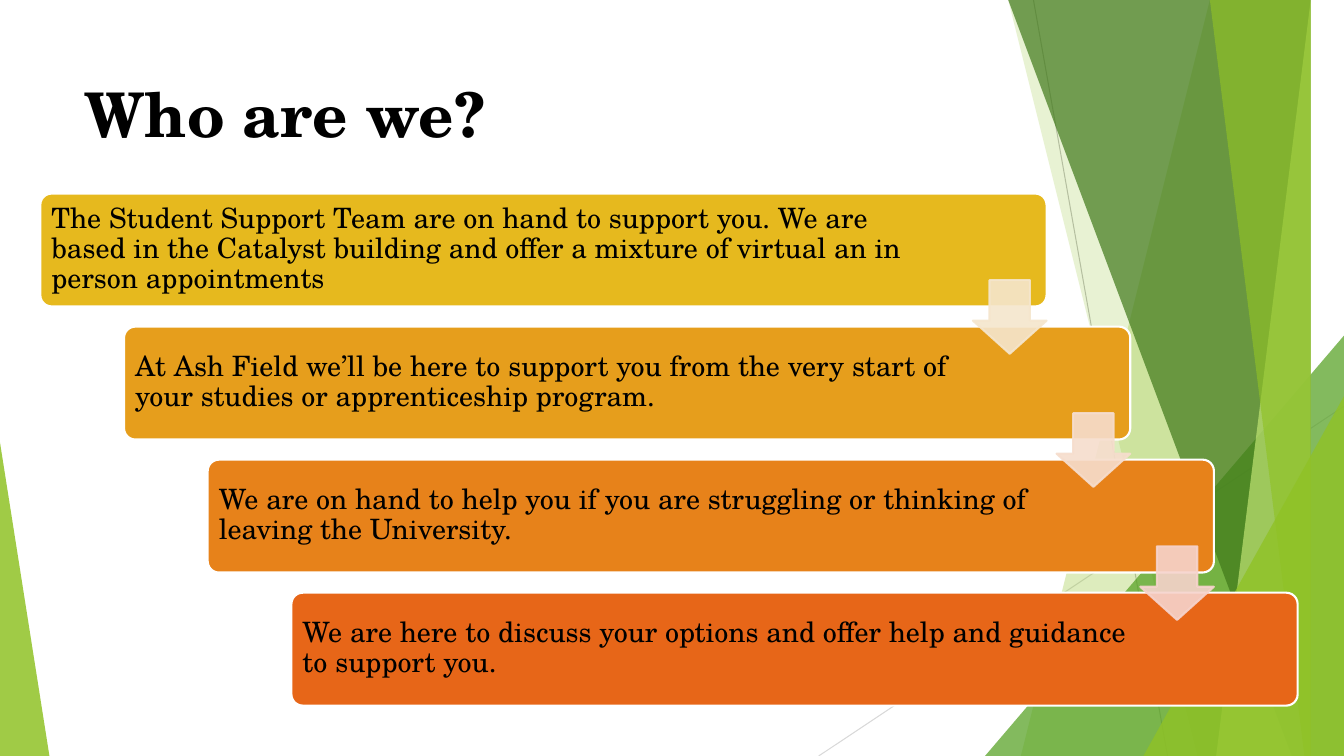
from lxml.etree import SubElement
from pptx import Presentation
from pptx.dml.color import RGBColor
from pptx.enum.shapes import MSO_CONNECTOR, MSO_SHAPE
from pptx.enum.text import MSO_ANCHOR, PP_ALIGN
from pptx.oxml.ns import qn
from pptx.util import Inches, Pt

WIDTH, HEIGHT = 13.33, 7.5
FONT = "TeX Gyre Schola"
COLORS = {
    "text": "000000", "outline": "FFFFFF",
    "line_dark": "BFBFBF", "line_light": "D9D9D9",
    "lime": "90C226", "green": "54A021", "forest": "3F7819", "pale": "C0E474",
    "card_1": "E6B91E", "card_2": "E69E1C", "card_3": "E7821A", "card_4": "E76618",
    "arrow_1": "F5E6CD", "arrow_2": "F6DDCD", "arrow_3": "F6D3CC",
}
STEPS = [
    ("The Student Support Team are on hand to support you. We are based in the "
     "Catalyst building and offer a mixture of virtual an in person appointments", 8.68),
    ("At Ash Field we’ll be here to support you from the very start of your "
     "studies or apprenticeship program.", 8.35),
    ("We are on hand to help you if you are struggling or thinking of leaving "
     "the University.", 8.37),
    ("We are here to discuss your options and offer help and guidance to "
     "support you.", 8.35),
]


def paint(fill, color, opacity=100):
    fill.solid()
    fill.fore_color.rgb = RGBColor.from_string(COLORS[color])
    if opacity < 100:
        for element in fill._xPr.iter(qn("a:srgbClr")):
            SubElement(element, qn("a:alpha"), val=str(opacity * 1000))


def style_shape(shape, color, opacity=100, outline=None):
    shape.shadow.inherit = False
    paint(shape.fill, color, opacity)
    if outline:
        shape.line.width = Pt(1.5)
        paint(shape.line.fill, outline, opacity)
    else:
        shape.line.fill.background()


def add_preset(slide, preset, box, adjustments):
    shape = slide.shapes.add_shape(preset, *(Inches(length) for length in box))
    for index, value in enumerate(adjustments):
        shape.adjustments[index] = value
    return shape


def add_text(slide, box, text, size, inset, anchor, bold=False, spacing=None):
    text_box = slide.shapes.add_textbox(*(Inches(length) for length in box))
    frame = text_box.text_frame
    frame.word_wrap = True
    frame.vertical_anchor = anchor
    frame.margin_left = frame.margin_right = Inches(inset)
    frame.margin_top = frame.margin_bottom = Inches(min(inset, 0.08))
    paragraph = frame.paragraphs[0]
    paragraph.alignment = PP_ALIGN.LEFT
    paragraph.line_spacing = spacing
    run = paragraph.add_run()
    run.text = text
    run.font.name = FONT
    run.font.size = Pt(size)
    run.font.bold = bold
    run.font.color.rgb = RGBColor.from_string(COLORS["text"])


def add_backdrop(slide, width, height):
    # Thin lines
    for start_x, start_y, end_x, color in [(10.25, 0, 11.58, "line_dark"),
                                           (width, 4.03, 8.12, "line_light")]:
        line = slide.shapes.add_connector(
            MSO_CONNECTOR.STRAIGHT, Inches(start_x), Inches(start_y),
            Inches(end_x), Inches(height))
        line.line.width = Pt(0.75)
        line.line.color.rgb = RGBColor.from_string(COLORS[color])
        SubElement(line._element.spPr, qn("a:effectLst"))

    # Bands run from a top corner to a bottom corner, then to the right edge
    def add_band(top_x, bottom_x, color, opacity):
        builder = slide.shapes.build_freeform(top_x, -0.01, scale=Inches(1))
        builder.add_line_segments(
            [(width, -0.01), (width, height), (bottom_x, height)], close=True)
        style_shape(builder.convert_to_shape(), color, opacity)

    # Triangles stand on the bottom edge
    def add_triangle(left, top, base, peak, color, opacity):
        box = (left, top, base, height - top)
        triangle = add_preset(slide, MSO_SHAPE.ISOSCELES_TRIANGLE, box, [peak])
        style_shape(triangle, color, opacity)

    add_band(12.28, 10.04, "lime", 30)
    add_band(10.5, 11.83, "lime", 20)
    add_triangle(9.77, 3.33, width - 9.77, 1, "green", 72)
    add_band(10.21, 12.91, "forest", 70)
    add_band(13.03, 11.92, "pale", 70)
    add_band(11.96, 13.18, "lime", 65)
    add_triangle(11.34, 3.93, width - 11.34, 1, "lime", 80)
    add_triangle(0, 4.39, 0.49, 0, "lime", 85)


def add_staircase(slide, left, top):
    card_width, card_height = 9.98, 1.12
    step_x, step_y, arrow_size = 0.83, 1.32, 0.73

    # Cards
    for index, (text, text_width) in enumerate(STEPS):
        x, y = left + index * step_x, top + index * step_y
        card = add_preset(slide, MSO_SHAPE.ROUNDED_RECTANGLE,
                          (x, y, card_width, card_height), [0.1])
        style_shape(card, f"card_{index + 1}", outline="outline")
        add_text(slide, (x + 0.03, y + 0.03, text_width, 1.05), text, 20, 0.08,
                 MSO_ANCHOR.MIDDLE, spacing=0.9)

    # Arrows from each card to the next
    for index in range(len(STEPS) - 1):
        x = left + card_width - arrow_size + index * step_x
        y = top + 0.86 + index * step_y
        arrow = add_preset(slide, MSO_SHAPE.DOWN_ARROW,
                           (x, y, arrow_size, arrow_size), [0.55, 0.45])
        color = f"arrow_{index + 1}"
        style_shape(arrow, color, 90, outline=color)


def main():
    presentation = Presentation()
    presentation.slide_width = Inches(WIDTH)
    presentation.slide_height = Inches(HEIGHT)
    slide = presentation.slides.add_slide(presentation.slide_layouts[6])
    add_backdrop(slide, WIDTH, HEIGHT)
    add_text(slide, (0.74, 0.67, 9.4, 1.44), "Who are we?", 44, 0.1,
             MSO_ANCHOR.TOP, bold=True)
    add_staircase(slide, 0.4, 1.92)
    presentation.save("out.pptx")


if __name__ == "__main__":
    main()
